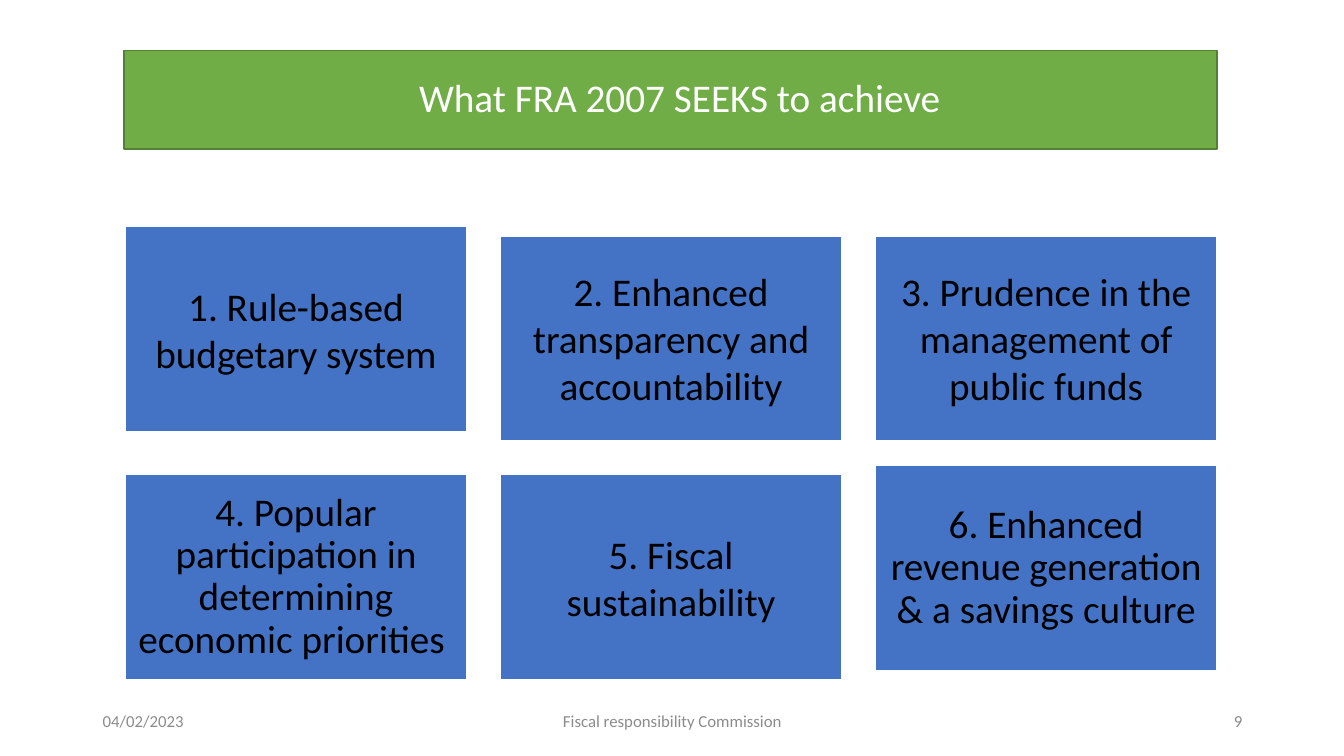
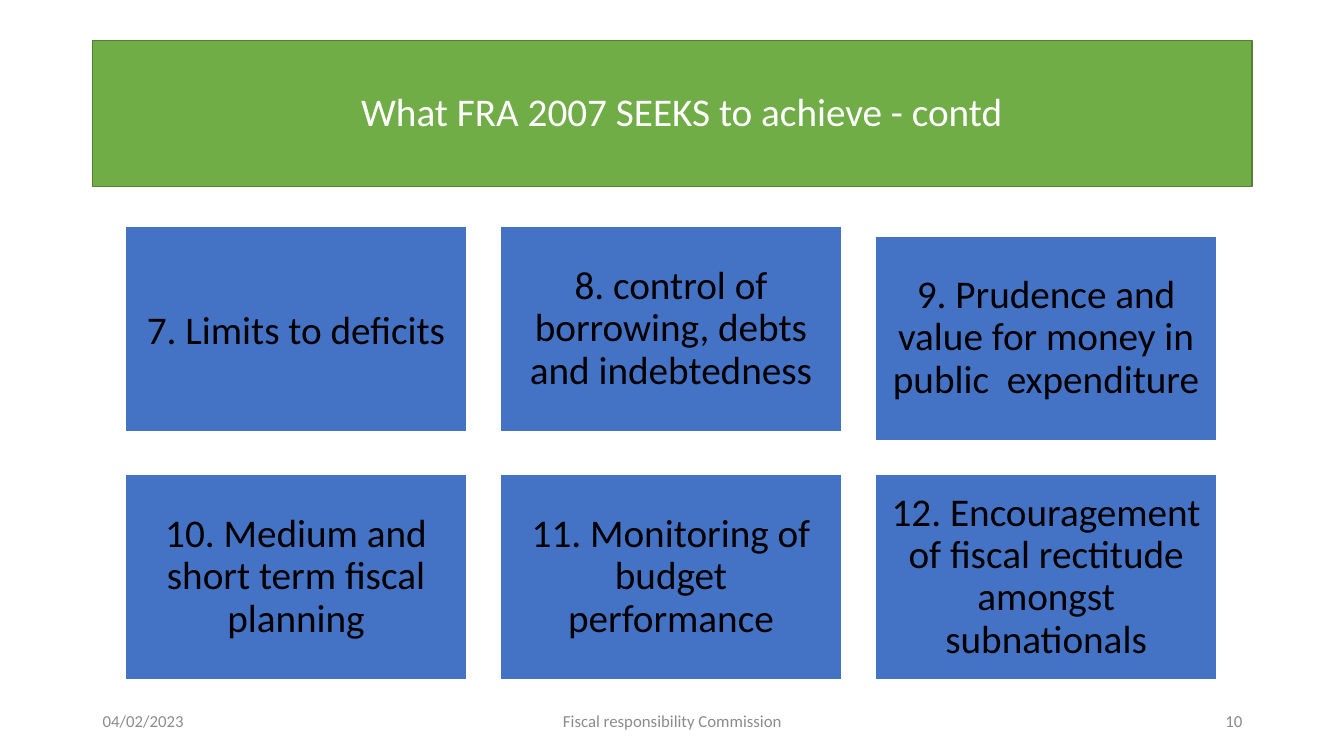
from dataclasses import dataclass

from pptx import Presentation
from pptx.dml.color import RGBColor
from pptx.enum.shapes import MSO_SHAPE
from pptx.enum.text import MSO_ANCHOR, PP_ALIGN
from pptx.util import Inches, Pt

RECT = MSO_SHAPE.RECTANGLE
MIDDLE = MSO_ANCHOR.MIDDLE
LEFT, CENTER, RIGHT = PP_ALIGN.LEFT, PP_ALIGN.CENTER, PP_ALIGN.RIGHT


@dataclass(frozen=True)
class Theme:
    font: str = "Calibri"
    body_size: int = 28
    footer_size: int = 12
    band: str = "70AD47"
    band_line: str = "538035"
    box: str = "4472C4"
    white: str = "FFFFFF"
    black: str = "000000"
    footer: str = "8C8C8C"
    page_number: str = "898989"


THEME = Theme()

# Box grid, in inches
COLUMNS = 3
GRID_LEFT, GRID_TOP = 1.24, 2.34
COLUMN_STEP, ROW_STEP = 3.72, 2.37
BOX_W, BOX_H = 3.39, 2.03
RAISE = 0.09
BOX_INSET = 0.12
TITLE_INDENT = 0.28
TIGHT, SINGLE = 0.9, 1.0

FOOTER_TOP, FOOTER_H = 6.95, 0.4
DATE = "04/02/2023"
ORGANISATION = "Fiscal responsibility Commission"

# Each box: text, line spacing, raised above its row or not
SLIDES = [
    {
        "number": 9,
        "title": "What FRA 2007 SEEKS to achieve",
        "band": (1.23, 0.5, 10.84, 0.98),
        "boxes": [
            ("1. Rule-based budgetary system", SINGLE, True),
            ("2. Enhanced transparency and accountability", SINGLE, False),
            ("3. Prudence in the management of public funds", SINGLE, False),
            ("4. Popular participation in determining economic priorities ", TIGHT, False),
            ("5. Fiscal sustainability", SINGLE, False),
            ("6. Enhanced revenue generation & a savings culture", TIGHT, True),
        ],
    },
    {
        "number": 10,
        "title": "What FRA 2007 SEEKS to achieve - contd",
        "band": (0.92, 0.4, 11.5, 1.45),
        "boxes": [
            ("7. Limits to deficits", SINGLE, True),
            ("8. control of borrowing, debts and indebtedness", TIGHT, True),
            ("9. Prudence and value for money in public  expenditure", TIGHT, False),
            ("10. Medium and short term fiscal planning", TIGHT, False),
            ("11. Monitoring of budget performance", TIGHT, False),
            ("12. Encouragement of fiscal rectitude amongst subnationals", TIGHT, False),
        ],
    },
]


def write(sp, text, size, color, align=CENTER, spacing=SINGLE, **margins):
    """Fill a shape with one paragraph; margins are margin_* lengths in inches."""
    tf = sp.text_frame
    frame_format = {"word_wrap": True, "vertical_anchor": MIDDLE}
    frame_format.update((side, Inches(gap)) for side, gap in margins.items())
    for name, value in frame_format.items():
        setattr(tf, name, value)
    p = tf.paragraphs[0]
    p.alignment = align
    p.line_spacing = spacing
    r = p.add_run()
    r.text = text
    for name, value in {"name": THEME.font, "size": Pt(size)}.items():
        setattr(r.font, name, value)
    r.font.color.rgb = RGBColor.from_string(color)


def add_rect(s, bounds, fill, line):
    sp = s.shapes.add_shape(RECT, *map(Inches, bounds))
    sp.shadow.inherit = False
    sp.fill.solid()
    sp.fill.fore_color.rgb = RGBColor.from_string(fill)
    sp.line.color.rgb = RGBColor.from_string(line)
    sp.line.width = Pt(1)
    return sp


prs = Presentation()
prs.slide_width, prs.slide_height = Inches(13.33), Inches(7.5)
blank = prs.slide_layouts[6]
box_margins = {f"margin_{side}": BOX_INSET for side in ("left", "top", "right", "bottom")}

for content in SLIDES:
    s = prs.slides.add_slide(blank)

    title = add_rect(s, content["band"], THEME.band, THEME.band_line)
    write(title, content["title"], THEME.body_size, THEME.white,
          spacing=TIGHT, margin_left=TITLE_INDENT)

    footers = [
        (0.92, 3, DATE, LEFT, THEME.footer),
        (4.42, 4.5, ORGANISATION, CENTER, THEME.footer),
        (9.42, 3, str(content["number"]), RIGHT, THEME.page_number),
    ]
    for left, width, text, align, color in footers:
        sp = s.shapes.add_textbox(*map(Inches, (left, FOOTER_TOP, width, FOOTER_H)))
        write(sp, text, THEME.footer_size, color, align)

    for i, (text, spacing, raised) in enumerate(content["boxes"]):
        row, column = divmod(i, COLUMNS)
        left = GRID_LEFT + column * COLUMN_STEP
        top = GRID_TOP + row * ROW_STEP - (RAISE if raised else 0)
        box = add_rect(s, (left, top, BOX_W, BOX_H), THEME.box, THEME.white)
        write(box, text, THEME.body_size, THEME.black, spacing=spacing, **box_margins)

prs.save("out.pptx")
